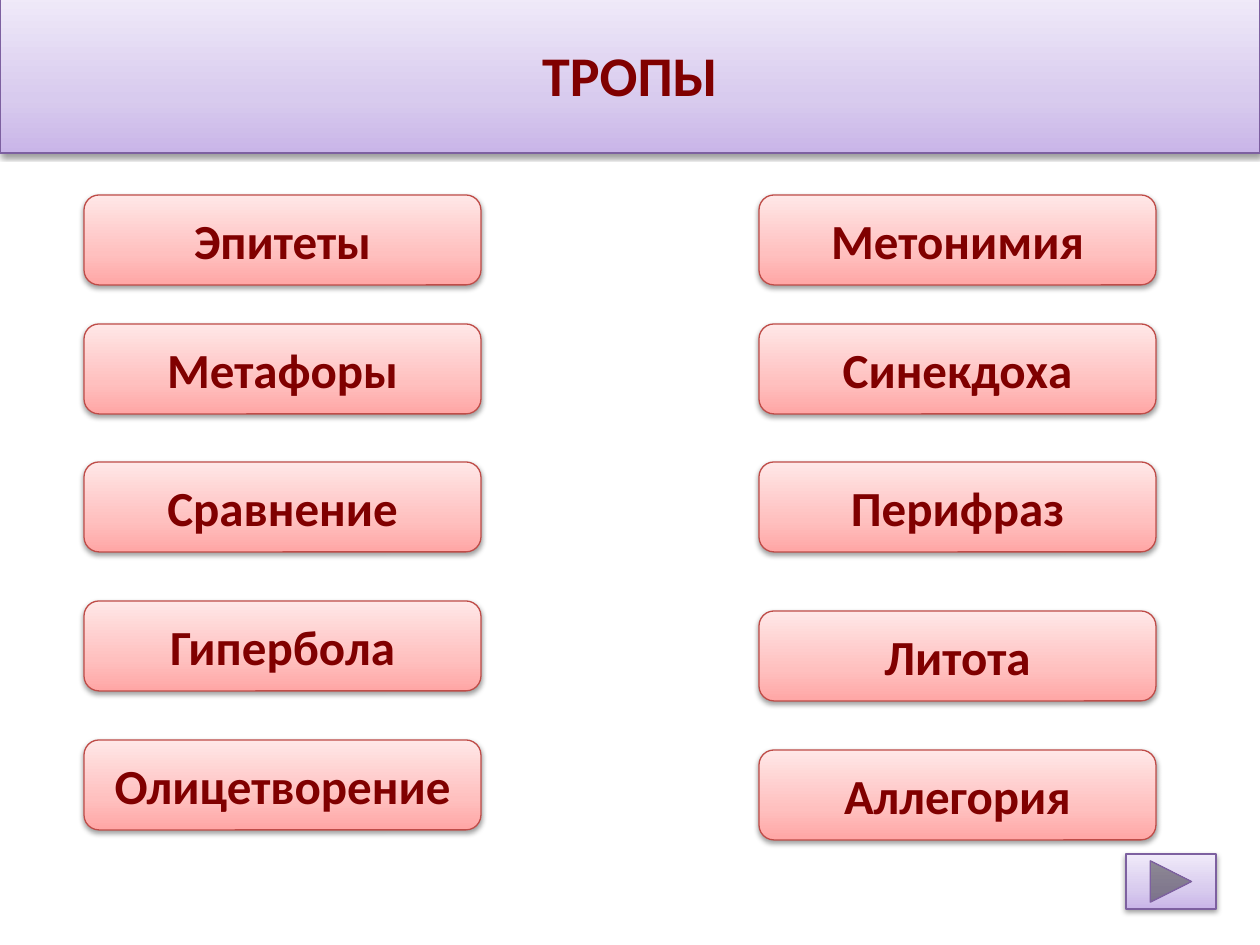
"""Build a menu slide listing ten tropes with a forward button."""
from copy import deepcopy
from typing import NamedTuple

from pptx import Presentation
from pptx.dml.color import RGBColor
from pptx.enum.shapes import MSO_SHAPE as Shape
from pptx.enum.text import MSO_ANCHOR as Anchor, PP_ALIGN as Align
from pptx.oxml import parse_xml
from pptx.oxml.ns import nsdecls, qn
from pptx.util import Emu, Pt

EMU_PER_PX = 9144000 / 1260
BUTTON_WIDTH, BUTTON_HEIGHT = 397, 90
STOP_POSITIONS = (0, 0.35, 1)


class Theme(NamedTuple):
    """Gradient colours from bottom to top, and the outline."""
    gradient: tuple[str, str, str]
    outline: str


class Column(NamedTuple):
    """A column of trope buttons: label and top of each."""
    left: int
    tropes: dict[str, int]


PINK = Theme(("FFA6A5", "FFC0BF", "FFE7E7"), "BF4C48")
LILAC = Theme(("C9B5E8", "D8CBEE", "F0EAF9"), "7D60A0")

COLUMNS = (
    Column(84, {"Эпитеты": 195, "Метафоры": 324, "Сравнение": 462,
                "Гипербола": 601, "Олицетворение": 740}),
    Column(759, {"Метонимия": 195, "Синекдоха": 324, "Перифраз": 462,
                 "Литота": 611, "Аллегория": 750}),
)


def px(length: int) -> Emu:
    """Turn pixels into EMU."""
    return Emu(round(length * EMU_PER_PX))


def color(value: str) -> RGBColor:
    """Turn a hex string into a colour."""
    return RGBColor.from_string(value)


def add_shadow(shape) -> None:
    """Give a shape a soft shadow below it."""
    shape.shadow.inherit = False
    effects = shape._element.spPr.find(qn("a:effectLst"))
    effects.append(parse_xml(
        f'<a:outerShdw {nsdecls("a")} blurRad="40000" dist="20000" '
        'dir="5400000" rotWithShape="0"><a:srgbClr val="000000">'
        '<a:alpha val="38000"/></a:srgbClr></a:outerShdw>'))


def add_panel(slide, kind: Shape, left: int, top: int, width: int,
              height: int, theme: Theme):
    """Draw a shape with a vertical gradient, outline and shadow."""
    panel = slide.shapes.add_shape(kind, px(left), px(top), px(width), px(height))
    panel.fill.gradient()
    panel.fill.gradient_angle = 90
    stops = panel._element.spPr.find(f".//{qn('a:gsLst')}")
    stops.append(deepcopy(stops[0]))
    for stop, position, value in zip(panel.fill.gradient_stops,
                                     STOP_POSITIONS, theme.gradient):
        stop.position = position
        stop.color.rgb = color(value)
    panel.line.color.rgb = color(theme.outline)
    panel.line.width = Pt(0.75)
    add_shadow(panel)
    return panel


def write(shape, text: str, *, size: int, ink: str = "800000",
          font: str = "Calibri", bold: bool = True) -> None:
    """Write centred text in a shape."""
    frame = shape.text_frame
    frame.word_wrap = True
    frame.vertical_anchor = Anchor.MIDDLE
    paragraph = frame.paragraphs[0]
    paragraph.alignment = Align.CENTER
    run = paragraph.add_run()
    run.text = text
    run.font.name = font
    run.font.size = Pt(size)
    run.font.bold = bold
    run.font.color.rgb = color(ink)


def add_column(slide, column: Column) -> None:
    """Draw one column of trope buttons."""
    for trope, top in column.tropes.items():
        button = add_panel(slide, Shape.FLOWCHART_ALTERNATE_PROCESS, column.left,
                           top, BUTTON_WIDTH, BUTTON_HEIGHT, PINK)
        write(button, trope, size=28)


def main() -> None:
    """Build and save the slide."""
    deck = Presentation()
    deck.slide_width, deck.slide_height = px(1260), px(945)
    slide = deck.slides.add_slide(deck.slide_layouts[6])
    header = add_panel(slide, Shape.RECTANGLE, 0, -4, 1260, 157, LILAC)
    write(header, "ТРОПЫ", size=32)
    for column in COLUMNS:
        add_column(slide, column)
    add_panel(slide, Shape.ACTION_BUTTON_FORWARD_OR_NEXT, 1126, 854, 90, 55, LILAC)
    deck.save("out.pptx")


if __name__ == "__main__":
    main()
